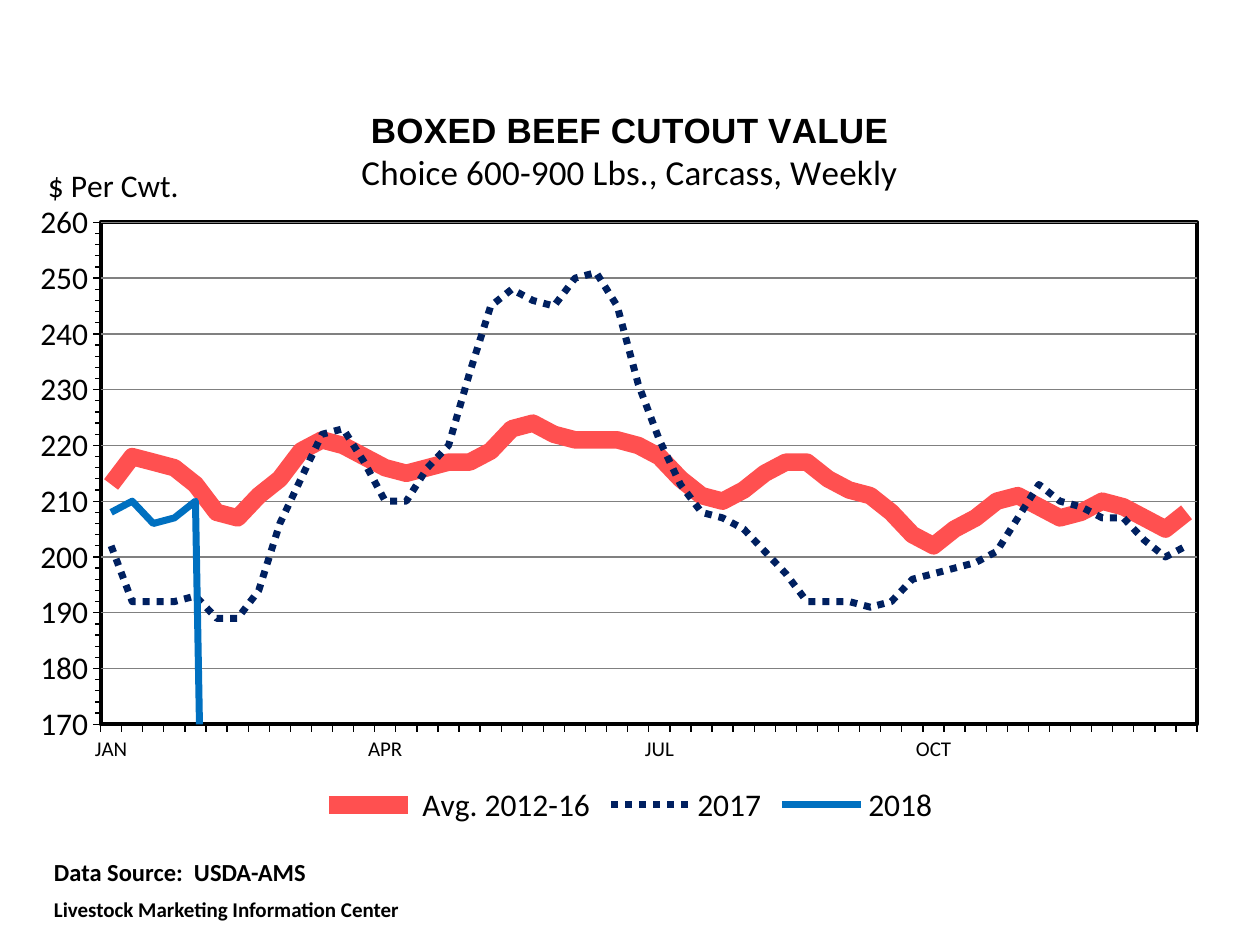
from dataclasses import dataclass
from typing import Optional

from lxml.etree import SubElement
from pptx import Presentation
from pptx.chart.data import CategoryChartData
from pptx.dml.color import RGBColor
from pptx.enum.chart import XL_CHART_TYPE as ChartType
from pptx.enum.chart import XL_LEGEND_POSITION as LegendPos
from pptx.enum.chart import XL_TICK_MARK as Tick
from pptx.enum.dml import MSO_LINE as Dash
from pptx.oxml import parse_xml
from pptx.oxml.ns import nsdecls, qn
from pptx.util import Inches, Pt

BLACK = RGBColor(0x00, 0x00, 0x00)
WHITE = RGBColor(0xFF, 0xFF, 0xFF)
GRAY = RGBColor(0x80, 0x80, 0x80)
RED = RGBColor(0xFF, 0x50, 0x50)
NAVY = RGBColor(0x00, 0x20, 0x60)
BLUE = RGBColor(0x00, 0x70, 0xC0)

WEEKS = 52
QUARTERS = ["JAN", "APR", "JUL", "OCT"]
WEEKS_PER_QUARTER = WEEKS // len(QUARTERS)


@dataclass
class PriceLine:
    name: str
    color: RGBColor
    width: float
    values: list[int]
    dash: Optional[Dash] = None


PRICE_LINES = [
    PriceLine(" Avg. 2012-16", RED, 10, [
        213, 218, 217, 216, 213, 208, 207, 211, 214, 219, 221, 220, 218,
        216, 215, 216, 217, 217, 219, 223, 224, 222, 221, 221, 221, 220,
        218, 214, 211, 210, 212, 215, 217, 217, 214, 212, 211, 208, 204,
        202, 205, 207, 210, 211, 209, 207, 208, 210, 209, 207, 205, 208]),
    PriceLine("2017", NAVY, 4, [
        202, 192, 192, 192, 193, 189, 189, 194, 206, 214, 222, 223, 217,
        210, 210, 216, 220, 233, 245, 248, 246, 245, 250, 251, 245, 231,
        221, 213, 208, 207, 205, 201, 197, 192, 192, 192, 191, 192, 196,
        197, 198, 199, 201, 207, 213, 210, 209, 207, 207, 203, 200, 202],
        Dash.ROUND_DOT),
    PriceLine("2018", BLUE, 4, [208, 210, 206, 207, 210]),
]


def add_run(p, text: str, *, size: float, font: str = "Calibri", bold: bool = False) -> None:
    r = p.add_run()
    r.text = text
    r.font.name, r.font.size, r.font.bold = font, Pt(size), bold
    r.font.color.rgb = BLACK


def set_line(line, color: RGBColor, width: float) -> None:
    line.color.rgb = color
    line.width = Pt(width)


def place(element, **shares: float) -> None:
    """Lay out a chart part by hand, in shares of the chart's size."""
    layout = element.find(qn("c:layout"))
    if layout is None:
        tx = element.find(qn("c:tx"))
        layout = parse_xml(f"<c:layout {nsdecls('c')}/>")
        element.insert(0 if tx is None else 1, layout)
    manual = SubElement(layout, qn("c:manualLayout"))
    if "w" in shares:
        SubElement(manual, qn("c:layoutTarget")).set("val", "inner")
    for side in "xy":
        SubElement(manual, qn(f"c:{side}Mode")).set("val", "edge")
    for key, share in shares.items():
        SubElement(manual, qn(f"c:{key}")).set("val", str(share))


def price_data() -> CategoryChartData:
    data = CategoryChartData()
    data.categories = [
        "" if week % WEEKS_PER_QUARTER else QUARTERS[week // WEEKS_PER_QUARTER]
        for week in range(WEEKS)
    ]
    for line in PRICE_LINES:
        blanks = [None] * (WEEKS - len(line.values))
        data.add_series(line.name, line.values + blanks)
    return data


def format_titles(chart) -> None:
    tf = chart.chart_title.text_frame
    add_run(tf.paragraphs[0], "BOXED BEEF CUTOUT VALUE", size=20, font="Arial", bold=True)
    add_run(tf.add_paragraph(), "Choice 600-900 Lbs., Carcass, Weekly", size=20)
    place(chart.chart_title._element, x=0.276, y=0.028)

    unit = chart.value_axis.axis_title
    add_run(unit.text_frame.paragraphs[0], "$ Per Cwt.", size=18)
    unit.text_frame._txBody.bodyPr.set("rot", "0")
    place(unit._element, x=0.017, y=0.098)


def format_axes(chart) -> None:
    prices, weeks = chart.value_axis, chart.category_axis
    prices.minimum_scale, prices.maximum_scale = 170, 260
    prices.major_unit, prices.minor_unit = 10, 2
    prices.minor_tick_mark = Tick.OUTSIDE
    prices.has_major_gridlines = True
    set_line(prices.major_gridlines.format.line, GRAY, 0.75)
    for axis, size in ((prices, 18), (weeks, 12)):
        axis.major_tick_mark = Tick.OUTSIDE
        set_line(axis.format.line, BLACK, 0.75)
        font = axis.tick_labels.font
        font.name, font.size, font.color.rgb = "Calibri", Pt(size), BLACK
    skip = parse_xml(f'<c:tickLblSkip {nsdecls("c")} val="1"/>')
    weeks._element.find(qn("c:noMultiLvlLbl")).addprevious(skip)


def format_plot(chart) -> None:
    for series, line in zip(chart.plots[0].series, PRICE_LINES):
        series.smooth = False
        set_line(series.format.line, line.color, line.width)
        if line.dash is not None:
            series.format.line.dash_style = line.dash
    root = chart._chartSpace.chart
    place(root.plotArea, x=0.065, y=0.185, w=0.9, h=0.673)
    root.plotArea.append(parse_xml(
        f'<c:spPr {nsdecls("c", "a")}><a:solidFill><a:srgbClr val="{WHITE}"/></a:solidFill>'
        f'<a:ln w="{Pt(2.25)}"><a:solidFill><a:srgbClr val="{BLACK}"/></a:solidFill></a:ln></c:spPr>'))
    # Weeks without a price fall to zero
    root.find(qn("c:dispBlanksAs")).set("val", "zero")


def add_price_chart(s) -> None:
    chart = s.shapes.add_chart(
        ChartType.LINE, Inches(0.17), Inches(0.67), Inches(9.67), Inches(5.92), price_data()
    ).chart
    chart.font.name, chart.font.size, chart.font.color.rgb = "Calibri", Pt(18), BLACK
    format_titles(chart)
    format_axes(chart)
    format_plot(chart)
    chart.has_legend = True
    chart.legend.position = LegendPos.BOTTOM
    chart.legend.include_in_layout = False


def add_source_note(s) -> None:
    tf = s.shapes.add_textbox(Inches(0.33), Inches(6.75), Inches(4.5), Inches(0.64)).text_frame
    tf.word_wrap = True
    add_run(tf.paragraphs[0], "Data Source:  USDA-AMS", size=14, bold=True)
    p = tf.add_paragraph()
    p.space_before = Pt(6)
    add_run(p, "Livestock Marketing Information Center", size=12, bold=True)


def main() -> None:
    prs = Presentation()
    prs.slide_width, prs.slide_height = Inches(10), Inches(7.5)
    s = prs.slides.add_slide(prs.slide_layouts[6])
    add_price_chart(s)
    add_source_note(s)
    prs.save("out.pptx")


if __name__ == "__main__":
    main()
